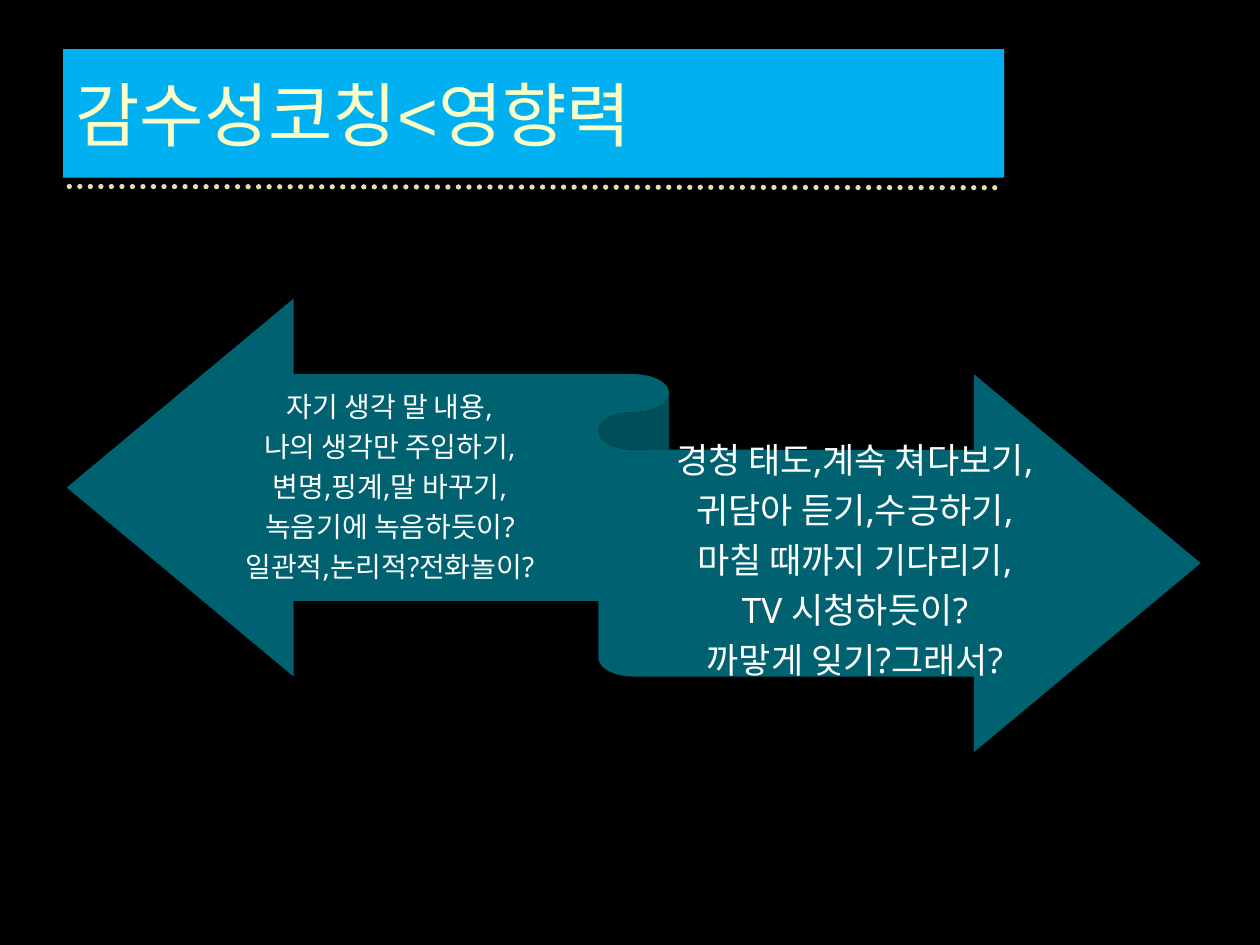
"""Build the sensitivity coaching slide with a two-way ribbon."""
from lxml import etree
from pptx import Presentation
from pptx.dml.color import RGBColor
from pptx.enum.dml import MSO_LINE
from pptx.enum.shapes import MSO_CONNECTOR, MSO_SHAPE
from pptx.enum.text import MSO_ANCHOR, MSO_AUTO_SIZE, PP_ALIGN
from pptx.oxml.ns import qn
from pptx.util import Inches, Pt

STRAIGHT = MSO_CONNECTOR.STRAIGHT
RIBBON = MSO_SHAPE.LEFT_RIGHT_RIBBON
DOTS = MSO_LINE.ROUND_DOT
MIDDLE = MSO_ANCHOR.MIDDLE
LEFT, CENTER = PP_ALIGN.LEFT, PP_ALIGN.CENTER


def paint(color_format, value):
    color_format.rgb = RGBColor.from_string(value)


deck = Presentation()
deck.slide_width, deck.slide_height = Inches(10), Inches(7.5)
page = deck.slides.add_slide(deck.slide_layouts[5])
page.background.fill.solid()
paint(page.background.fill.fore_color, "000000")

title = page.shapes.title
title.left, title.top = Inches(0.5), Inches(0.39)
title.width, title.height = Inches(7.47), Inches(1.02)
title.fill.solid()
paint(title.fill.fore_color, "00B0F0")
title.text_frame.text = "감수성코칭<영향력"
title.text_frame.vertical_anchor = MIDDLE
title.text_frame.auto_size = MSO_AUTO_SIZE.NONE
heading = title.text_frame.paragraphs[0]
heading.alignment = LEFT
heading.font.name = "Arial"
heading.font.size = Pt(40)
paint(heading.font.color, "FBFEC6")

rule = page.shapes.add_connector(
    STRAIGHT, Inches(0.55), Inches(1.48), Inches(7.97), Inches(1.49))
paint(rule.line.color, "DDE0AF")
rule.line.width = Pt(3)
rule.line.dash_style = DOTS
rule.line._get_or_add_ln().set("cap", "rnd")
etree.SubElement(rule._element.spPr, qn("a:effectLst"))

group = page.shapes.add_group_shape()
ribbon = group.shapes.add_shape(
    RIBBON, Inches(0.53), Inches(2.37), Inches(9), Inches(3.6))
ribbon.shadow.inherit = False
ribbon.fill.solid()
paint(ribbon.fill.fore_color, "006270")
ribbon.line.fill.background()

sides = [
    (1.61, 3, 2.97, 16, 0.06, 0.07, [
        "자기 생각 말 내용,",
        "나의 생각만 주입하기,",
        "변명,핑계,말 바꾸기,",
        "녹음기에 녹음하듯이?",
        "일관적,논리적?전화놀이?",
    ]),
    (5.03, 3.58, 3.51, 20, 0.08, 0.08, [
        "경청 태도,계속 쳐다보기,",
        "귀담아 듣기,수긍하기,",
        "마칠 때까지 기다리기,",
        "TV 시청하듯이?",
        "까맣게 잊기?그래서?",
    ]),
]
for left, top, width, size, inset_top, inset_bottom, lines in sides:
    box = group.shapes.add_textbox(
        Inches(left), Inches(top), Inches(width), Inches(1.76))
    frame = box.text_frame
    frame.word_wrap = True
    frame.vertical_anchor = MIDDLE
    frame.margin_left = frame.margin_right = 0
    frame.margin_top, frame.margin_bottom = Inches(inset_top), Inches(inset_bottom)
    frame.text = "\n".join(lines)
    for para in frame.paragraphs:
        para.alignment = CENTER
        para.line_spacing = 0.9
        after = etree.SubElement(para._p.get_or_add_pPr(), qn("a:spcAft"))
        etree.SubElement(after, qn("a:spcPct"), val="35000")
        para.font.name = "Noto Sans"
        para.font.size = Pt(size)
        paint(para.font.color, "FFFFFF")

deck.save("out.pptx")
